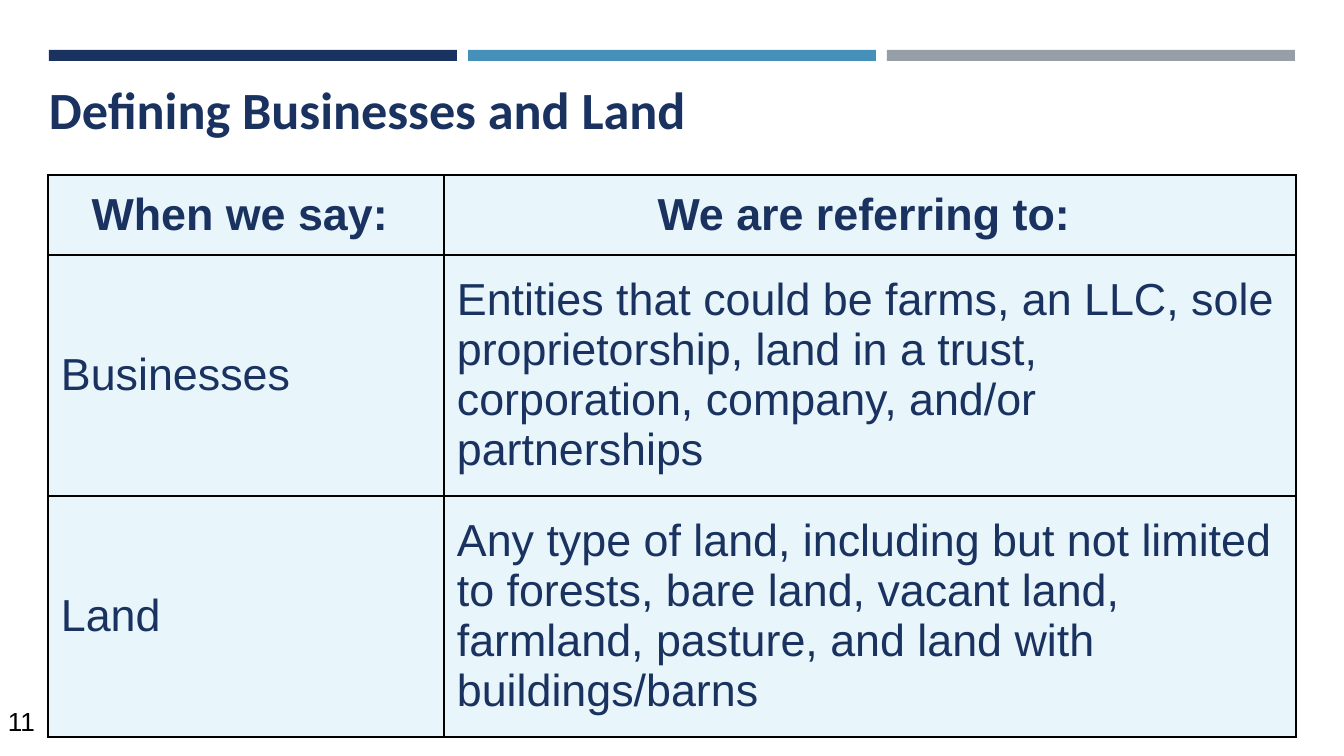
import dataclasses

import pptx
import pptx.dml.color
import pptx.enum.shapes
import pptx.enum.text
import pptx.oxml.ns
import pptx.util
from lxml import etree

ALIGN = pptx.enum.text.PP_ALIGN
ANCHOR = pptx.enum.text.MSO_ANCHOR
EMU_PER_PX = 914400 / 134.4


@dataclasses.dataclass(frozen=True)
class Theme:
    navy: str = "1A3260"
    blue: str = "4590B8"
    grey: str = "969FA7"
    pale: str = "E8F6FB"
    black: str = "000000"
    heading_font: str = "Calibri"
    body_font: str = "Arial"
    title_size: int = 28
    table_size: int = 24
    number_size: int = 14


def px(length):
    return pptx.util.Emu(round(length * EMU_PER_PX))


def rgb(color):
    return pptx.dml.color.RGBColor.from_string(color)


def write_text(frame, text, *, font, size, color, bold=False, align=ALIGN.LEFT,
               line_spacing=None):
    paragraph = frame.paragraphs[0]
    paragraph.alignment = align
    paragraph.line_spacing = line_spacing
    run = paragraph.add_run()
    run.text = text
    run.font.name = font
    run.font.size = pptx.util.Pt(size)
    run.font.bold = bold
    run.font.color.rgb = rgb(color)


class SlideBuilder:
    def __init__(self, slide, theme):
        self.slide = slide
        self.theme = theme

    def bar(self, left, top, width, height, color):
        bar = self.slide.shapes.add_shape(
            pptx.enum.shapes.MSO_SHAPE.RECTANGLE,
            px(left), px(top), px(width), px(height))
        bar.shadow.inherit = False
        bar.fill.solid()
        bar.fill.fore_color.rgb = rgb(color)
        bar.line.fill.background()

    def text(self, left, top, width, height, text, *, inset_left=13, inset_y=13, **style):
        frame = self.slide.shapes.add_textbox(
            px(left), px(top), px(width), px(height)).text_frame
        frame.word_wrap = True
        frame.margin_left, frame.margin_right = px(inset_left), px(13)
        frame.margin_top = frame.margin_bottom = px(inset_y)
        write_text(frame, text, **style)

    def table(self, left, top, column_widths, row_heights, rows):
        table = self.slide.shapes.add_table(
            len(rows), len(column_widths), px(left), px(top),
            px(sum(column_widths)), px(sum(row_heights))).table
        for column, width in zip(table.columns, column_widths):
            column.width = px(width)
        for row, height in zip(table.rows, row_heights):
            row.height = px(height)
        for r, row in enumerate(rows):
            for c, text in enumerate(row):
                self.cell(table.cell(r, c), text, header=r == 0)

    def cell(self, cell, text, header):
        self.borders(cell)
        cell.fill.solid()
        cell.fill.fore_color.rgb = rgb(self.theme.pale)
        cell.vertical_anchor = ANCHOR.MIDDLE
        cell.margin_left = cell.margin_right = px(13)
        cell.margin_top = cell.margin_bottom = px(13)
        write_text(cell.text_frame, text, font=self.theme.body_font,
                   size=self.theme.table_size, color=self.theme.navy, bold=header,
                   align=ALIGN.CENTER if header else ALIGN.LEFT)

    def borders(self, cell):
        qn = pptx.oxml.ns.qn
        properties = cell._tc.get_or_add_tcPr()
        for side in ("a:lnL", "a:lnR", "a:lnT", "a:lnB"):
            line = etree.SubElement(properties, qn(side), w=str(pptx.util.Pt(1)))
            fill = etree.SubElement(line, qn("a:solidFill"))
            etree.SubElement(fill, qn("a:srgbClr"), val=self.theme.black)


def main():
    theme = Theme()
    deck = pptx.Presentation()
    deck.slide_width, deck.slide_height = px(1344), px(756)
    builder = SlideBuilder(deck.slides.add_slide(deck.slide_layouts[6]), theme)

    # Three-colour band across the top
    for index, color in enumerate((theme.navy, theme.blue, theme.grey)):
        builder.bar(49 + index * 419, 50, 408, 11, color)

    # Title
    builder.text(13, 55, 1201, 102, "Defining Businesses and Land", inset_left=36,
                 font=theme.heading_font, size=theme.title_size, color=theme.navy,
                 bold=True, line_spacing=1.15)

    # Definitions
    builder.table(48, 175, (396, 852), (76, 227, 227), (
        ("When we say: ", "We are referring to: "),
        ("Businesses",
         "Entities that could be farms, an LLC, sole proprietorship, land in a trust, "
         "corporation, company, and/or partnerships"),
        ("Land",
         "Any type of land, including but not limited to forests, bare land, vacant land, "
         "farmland, pasture, and land with buildings/barns"),
    ))

    # Slide number
    builder.text(-32, 698, 80, 58, "11", inset_y=7, font=theme.body_font,
                 size=theme.number_size, color=theme.black, align=ALIGN.RIGHT)

    deck.save("out.pptx")


if __name__ == "__main__":
    main()
